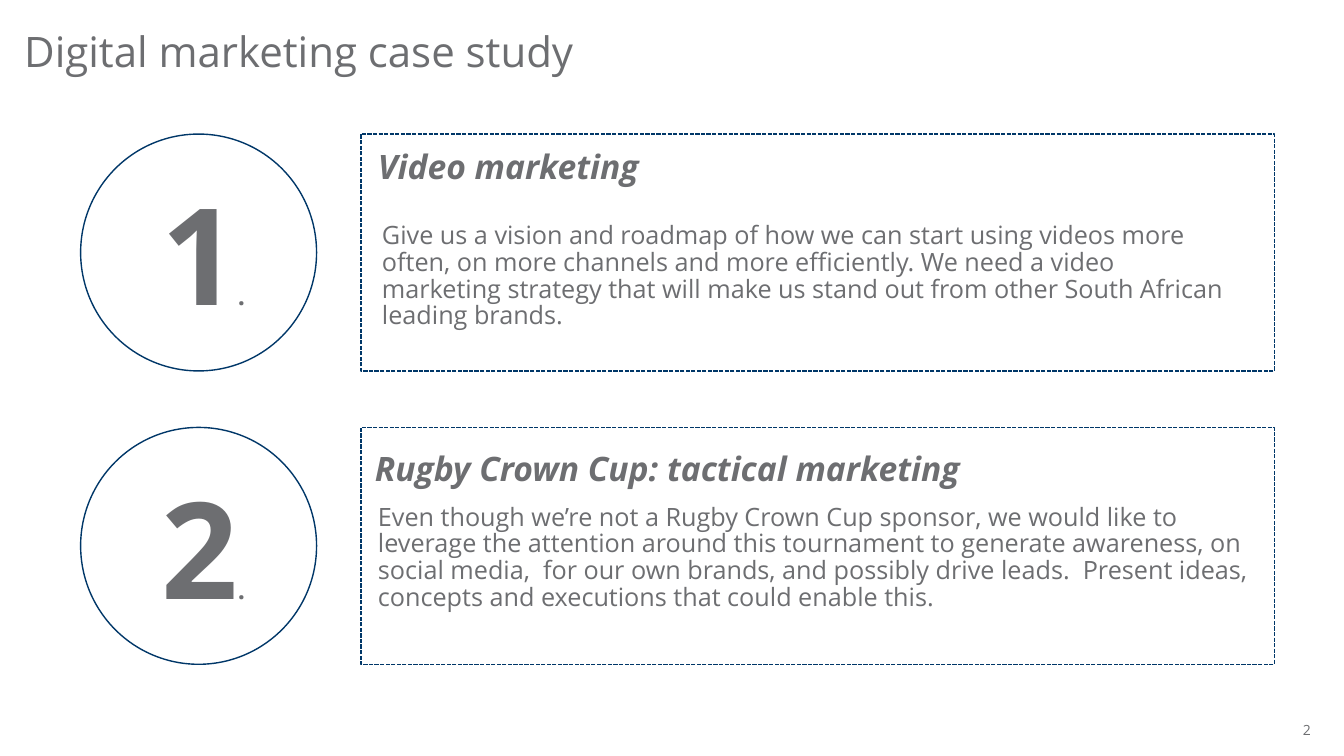
from dataclasses import dataclass

from pptx import Presentation
from pptx import util as u
from pptx.dml.color import RGBColor
from pptx.enum import dml, shapes, text


@dataclass(frozen=True)
class Theme:
    font: str = "Open Sans"
    ink: RGBColor = RGBColor.from_string("6D6E71")
    outline: RGBColor = RGBColor.from_string("003768")
    page_number: int = 10
    body: int = 18
    heading: int = 24
    title: int = 30
    numeral: int = 96


class Page:
    def __init__(self, deck, theme):
        self.theme = theme
        self.slide = deck.slides.add_slide(deck.slide_layouts[6])

    def outline(self, kind, left, top, width, height, dash=None):
        shape = self.slide.shapes.add_shape(
            kind, u.Inches(left), u.Inches(top), u.Inches(width), u.Inches(height))
        shape.shadow.inherit = False
        shape.fill.background()
        shape.line.color.rgb = self.theme.outline
        shape.line.width = u.Pt(1)
        if dash:
            shape.line.dash_style = dash

    def text(self, words, left, top, width, height, size, bold=False, italic=False,
             inset=True, grow=True, spacing=None, align=None, anchor=text.MSO_ANCHOR.TOP):
        box = self.slide.shapes.add_textbox(
            u.Inches(left), u.Inches(top), u.Inches(width), u.Inches(height))
        frame = box.text_frame
        frame.word_wrap = True
        frame.auto_size = (text.MSO_AUTO_SIZE.SHAPE_TO_FIT_TEXT if grow
                           else text.MSO_AUTO_SIZE.NONE)
        frame.vertical_anchor = anchor
        if not inset:
            frame.margin_left = frame.margin_right = 0
            frame.margin_top = frame.margin_bottom = 0
        para = frame.paragraphs[0]
        para.add_run().text = words
        para.alignment = align
        para.line_spacing = spacing
        font = para.font
        font.name, font.size = self.theme.font, u.Pt(size)
        font.bold, font.italic = bold, italic
        font.color.rgb = self.theme.ink
        return para

    def numeral(self, digit, left, top):
        para = self.text(digit, left, top, 1.18, 1.72, self.theme.numeral, bold=True)
        span = para.add_run()
        span.text = "."
        span.font.size = u.Pt(self.theme.body)

    def heading(self, words, left, top):
        self.text(words, left, top, 8.76, 0.5, self.theme.heading, bold=True, italic=True)

    def body(self, words, left, top, width, height):
        self.text(words, left, top, width, height, self.theme.body, grow=False, spacing=0.88)


CASES = [
    (1.33, "Video marketing", (3.65, 1.4),
     "Give us a vision and roadmap of how we can start using videos more often, on more "
     "channels and more efficiently. We need a video marketing strategy that will make us "
     "stand out from other South African leading brands.", (3.69, 2.17, 8.69, 1.31)),
    (4.24, "Rugby Crown Cup: tactical marketing", (3.62, 4.39),
     "Even though we’re not a Rugby Crown Cup sponsor, we would like to leverage the "
     "attention around this tournament to generate awareness, on social media,  for our own "
     "brands, and possibly drive leads.  Present ideas, concepts and executions that could "
     "enable this.", (3.65, 4.96, 8.98, 1.31)),
]


def main():
    deck = Presentation()
    deck.slide_width, deck.slide_height = u.Inches(13.33), u.Inches(7.5)
    theme = Theme()
    page = Page(deck, theme)

    page.text("2", 9.74, 7.16, 3.26, 0.17, theme.page_number, inset=False,
              align=text.PP_ALIGN.RIGHT)
    page.text("Digital marketing case study", 0.24, 0.29, 10.63, 0.48, theme.title,
              inset=False, grow=False, spacing=0.9, anchor=text.MSO_ANCHOR.MIDDLE)

    for number, (top, heading, heading_at, body, body_at) in enumerate(CASES, 1):
        page.outline(shapes.MSO_SHAPE.OVAL, 0.8, top, 2.34, 2.35)
        page.numeral(str(number), 1.5, top + 0.32)
        page.outline(shapes.MSO_SHAPE.RECTANGLE, 3.58, top, 9.06, 2.35,
                     dml.MSO_LINE.SQUARE_DOT)
        page.heading(heading, *heading_at)
        page.body(body, *body_at)

    deck.save("out.pptx")


if __name__ == "__main__":
    main()
